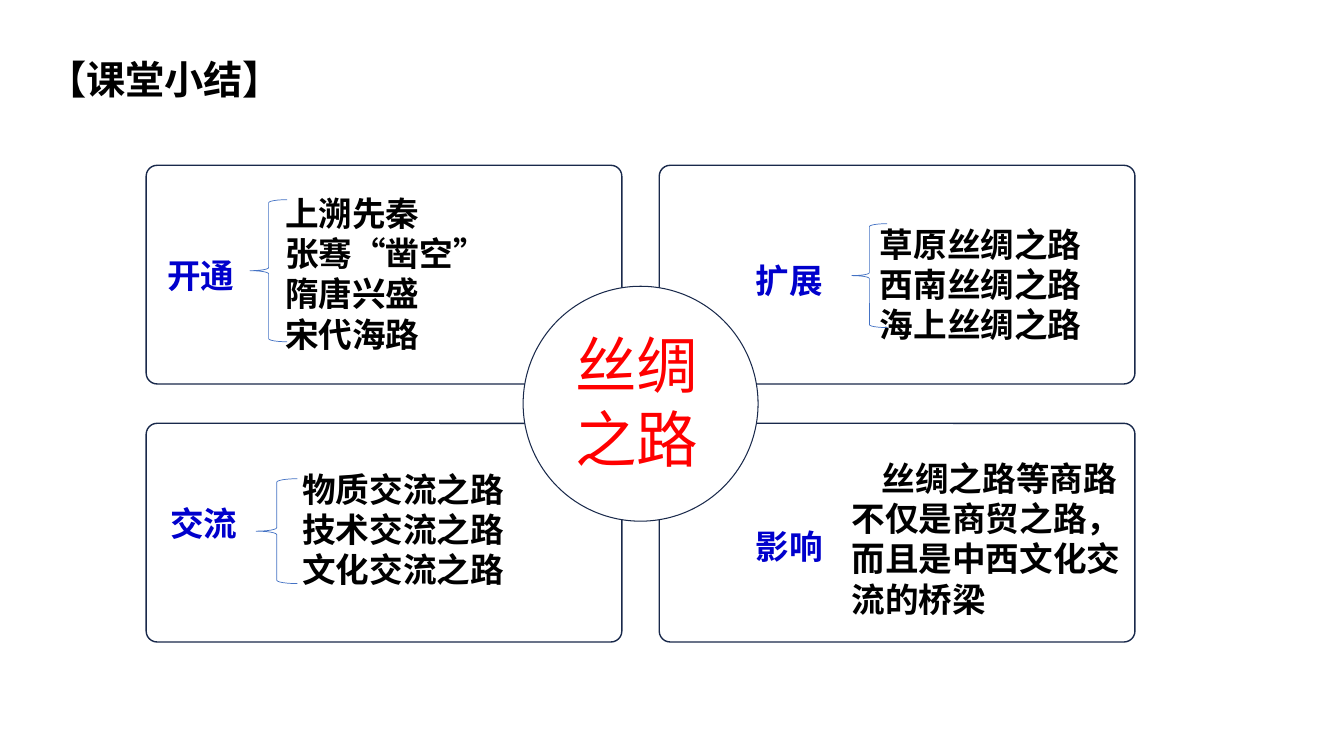
from lxml import etree
from pptx import Presentation
from pptx.dml.color import RGBColor
from pptx.enum import shapes, text
from pptx.oxml.ns import qn
from pptx.util import Pt

FONT = "Noto Sans CJK SC"
BLACK = RGBColor(0x00, 0x00, 0x00)
WHITE = RGBColor(0xFF, 0xFF, 0xFF)
RED = RGBColor(0xFF, 0x00, 0x00)
LABEL_BLUE = RGBColor(0x00, 0x00, 0xCC)
NAVY = RGBColor(0x19, 0x29, 0x4B)
BRACE_BLUE = RGBColor(0x44, 0x72, 0xC4)

# Content: boxes are (left, top, width, height) in points
TITLE = "【课堂小结】"
CENTER = ["丝绸", "之路"]
TOPICS = [
    dict(label="开通", label_box=(112.3, 178.6, 63.4, 36.7),
         lines=["上溯先秦", "张骞“凿空”", "隋唐兴盛", "宋代海路"],
         lines_box=(196.6, 133.9, 185.8, 123.8),
         brace=(178.6, 142.6, 26.6, 101.5)),
    dict(label="扩展", label_box=(532.8, 182.2, 63.4, 36),
         lines=["草原丝绸之路", "西南丝绸之路", "海上丝绸之路"],
         lines_box=(621.4, 156.2, 232.6, 94.3),
         brace=(608.4, 159.8, 25.2, 74.2)),
    dict(label="交流", label_box=(114.5, 355.7, 63.4, 36.7),
         lines=["物质交流之路", "技术交流之路", "文化交流之路"],
         lines_box=(208.8, 331.2, 232.6, 94.3),
         brace=(182.9, 342, 29.5, 74.9)),
    dict(label="影响", label_box=(532.8, 372.2, 63.4, 36),
         lines=["丝绸之路等商路不仅是商贸之路，而且是中西文化交流的桥梁"],
         lines_box=(601.2, 323.3, 210.2, 123.8), indent=21.5),
]

# Card grid
CARD_LEFT, CARD_TOP = 104.4, 118.1
CARD_W, CARD_H = 339.8, 156.2
STEP_X, STEP_Y = 366.5, 184.3

prs = Presentation()
prs.slide_width, prs.slide_height = Pt(960), Pt(540)
s = prs.slides.add_slide(prs.slide_layouts[5])


def place(sp, box):
    sp.left, sp.top, sp.width, sp.height = map(Pt, box)


def write(sp, lines, size, color, bold=True, wrap=False, indent=0):
    tf = sp.text_frame
    tf.word_wrap = wrap
    tf.auto_size = text.MSO_AUTO_SIZE.NONE
    tf.vertical_anchor = text.MSO_ANCHOR.TOP
    tf.text = "\n".join(lines)
    for p in tf.paragraphs:
        p.alignment = text.PP_ALIGN.LEFT
        p.line_spacing = Pt(size * 1.2)
        p.space_before = Pt(0)
        if indent:
            p._p.get_or_add_pPr().set("indent", str(Pt(indent)))
        for r in p.runs:
            f = r.font
            f.name, f.size, f.bold = FONT, Pt(size), bold
            f.color.rgb = color
            # East Asian typeface
            ea = etree.SubElement(r._r.get_or_add_rPr(), qn("a:ea"))
            ea.set("typeface", FONT)


def add_text(box, *args, **kwargs):
    write(s.shapes.add_textbox(*map(Pt, box)), *args, **kwargs)


def add_outline(kind, box, color, weight, fill=None):
    sp = s.shapes.add_shape(kind, *map(Pt, box))
    sp.shadow.inherit = False
    if fill is None:
        sp.fill.background()
    else:
        sp.fill.solid()
        sp.fill.fore_color.rgb = fill
    sp.line.color.rgb = color
    sp.line.width = Pt(weight)
    return sp


# Title
place(s.shapes.title, (26.6, 36, 184.3, 41))
write(s.shapes.title, [TITLE], 28, BLACK)

# Four cards
for i in range(len(TOPICS)):
    row, col = divmod(i, 2)
    card = add_outline(
        shapes.MSO_SHAPE.ROUNDED_RECTANGLE,
        (CARD_LEFT + col * STEP_X, CARD_TOP + row * STEP_Y, CARD_W, CARD_H),
        NAVY, 1)
    card.adjustments[0] = 0.05

# Card contents
for topic in TOPICS:
    add_text(topic["label_box"], [topic["label"]], 24, LABEL_BLUE)
    add_text(topic["lines_box"], topic["lines"], 24, BLACK, wrap=True,
             indent=topic.get("indent", 0))
    if "brace" in topic:
        add_outline(shapes.MSO_SHAPE.LEFT_BRACE, topic["brace"], BRACE_BLUE, 0.5)

# Central circle
add_outline(shapes.MSO_SHAPE.OVAL, (373.7, 204.5, 167.8, 167.8), NAVY, 0.75, WHITE)
add_text((403.9, 229.7, 103.7, 113.8), CENTER, 44, RED, bold=False)

prs.save("out.pptx")
